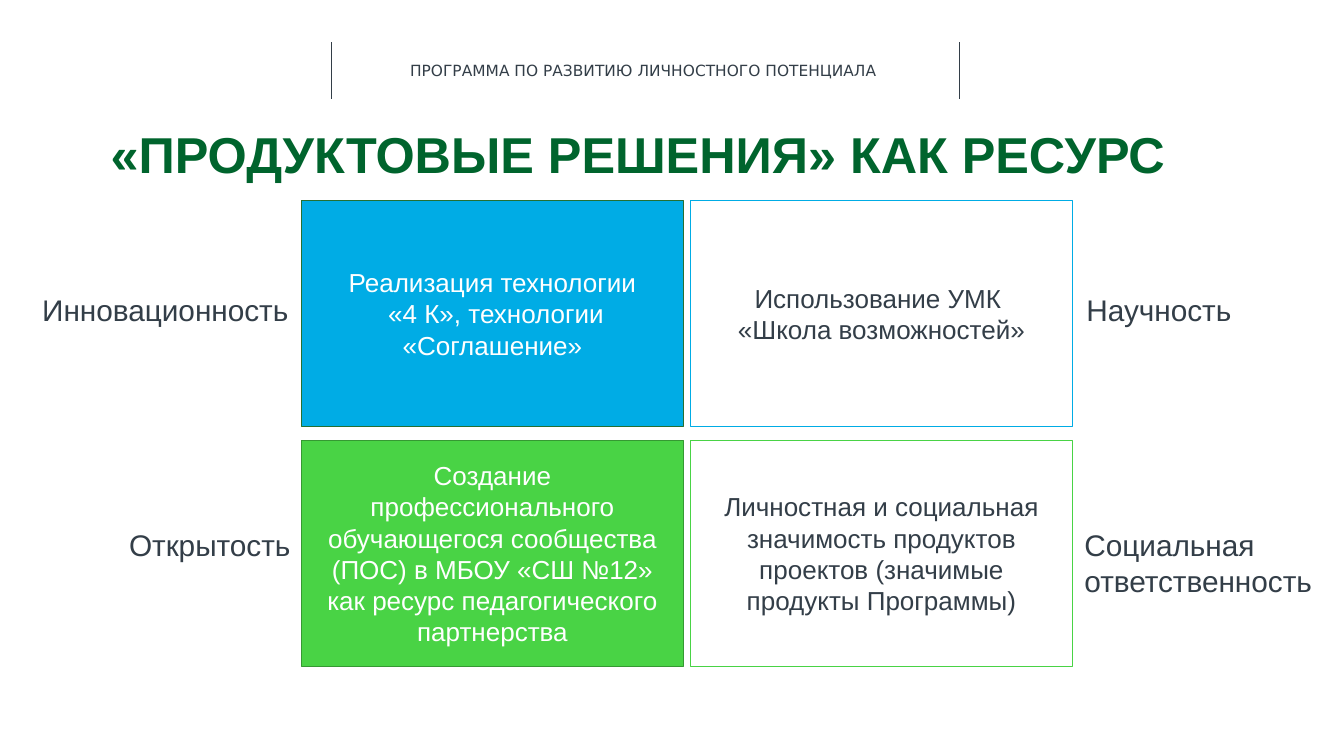
from lxml.etree import SubElement
from pptx import Presentation
from pptx.dml.color import RGBColor
from pptx.enum.shapes import MSO_CONNECTOR as Connector, MSO_SHAPE as Shape
from pptx.enum.text import MSO_ANCHOR as Anchor, PP_ALIGN as Align
from pptx.oxml.ns import qn
from pptx.util import Pt

COLOURS = {
    "ink": "333E48", "white": "FFFFFF", "title": "00642D",
    "blue": "00ACE5", "blue_edge": "256F32",
    "green": "49D345", "green_edge": "359932",
}
PROGRAMME = "ПРОГРАММА ПО РАЗВИТИЮ ЛИЧНОСТНОГО ПОТЕНЦИАЛА"
TITLE = "«ПРОДУКТОВЫЕ РЕШЕНИЯ» КАК РЕСУРС "

# Rows of cards: (paragraphs, fill, edge, text colour)
CARDS = [
    [(["Реализация технологии", " «4 К», технологии «Соглашение»"],
      "blue", "blue_edge", "white"),
     (["Использование УМК ", "«Школа возможностей»"], "white", "blue", "ink")],
    [(["Создание профессионального обучающегося сообщества (ПОС) в МБОУ "
       "«СШ №12» как ресурс педагогического партнерства"],
      "green", "green_edge", "white"),
     (["Личностная и социальная значимость продуктов проектов "
       "(значимые продукты Программы)"], "white", "green", "ink")],
]
# Labels beside the cards: (text, left, top, width, height, alignment)
LABELS = [
    ("Инновационность", -1.44, 204.48, 214.56, 33.12, Align.RIGHT),
    ("Научность", 768.96, 204.48, 150.48, 33.12, Align.LEFT),
    ("Открытость", 0, 372.96, 214.56, 33.12, Align.RIGHT),
    ("Социальная ответственность", 767.52, 372.96, 190.8, 59.04, Align.LEFT),
]
GRID_LEFT, GRID_TOP = 215.28, 143.28
CARD_WIDTH, CARD_HEIGHT = 272.88, 161.28
COLUMN_GAP, ROW_GAP = 5.04, 10.08
RULE_XS, RULE_TOP, RULE_BOTTOM = (236.88, 685.44), 30.24, 70.56


def rgb(name):
    return RGBColor.from_string(COLOURS[name])


def write(shape, paragraphs, size, colour, align, font="Arial", bold=False):
    frame = shape.text_frame
    frame.word_wrap = True
    for index, text in enumerate(paragraphs):
        para = frame.add_paragraph() if index else frame.paragraphs[0]
        para.text = text
        para.alignment = align
        para.font.name = font
        para.font.size = Pt(size)
        para.font.bold = bold
        para.font.color.rgb = rgb(colour)


def add_text(page, text, left, top, width, height, *style, **options):
    box = page.shapes.add_textbox(Pt(left), Pt(top), Pt(width), Pt(height))
    write(box, [text], *style, **options)


def add_rule(page, x):
    rule = page.shapes.add_connector(
        Connector.STRAIGHT, Pt(x), Pt(RULE_TOP), Pt(x), Pt(RULE_BOTTOM))
    rule.line.color.rgb = rgb("ink")
    rule.line.width = Pt(0.75)
    SubElement(rule._element.spPr, qn("a:effectLst"))


def add_card(page, row, column, paragraphs, fill, edge, colour):
    card = page.shapes.add_shape(
        Shape.RECTANGLE,
        Pt(GRID_LEFT + column * (CARD_WIDTH + COLUMN_GAP)),
        Pt(GRID_TOP + row * (CARD_HEIGHT + ROW_GAP)),
        Pt(CARD_WIDTH), Pt(CARD_HEIGHT))
    card.shadow.inherit = False
    card.fill.solid()
    card.fill.fore_color.rgb = rgb(fill)
    card.line.color.rgb = rgb(edge)
    card.line.width = Pt(1)
    card.text_frame.vertical_anchor = Anchor.MIDDLE
    write(card, paragraphs, 18.6, colour, Align.CENTER)


def main():
    deck = Presentation()
    deck.slide_width, deck.slide_height = Pt(960), Pt(540)
    page = deck.slides.add_slide(deck.slide_layouts[6])
    for x in RULE_XS:
        add_rule(page, x)
    add_text(page, PROGRAMME, 285.84, 40.32, 350.64, 20.88,
             11, "ink", Align.LEFT, font="DejaVu Sans")
    add_text(page, TITLE, 29.52, 84.24, 862.56, 36.72,
             36, "title", Align.CENTER, bold=True)
    for row, cards in enumerate(CARDS):
        for column, card in enumerate(cards):
            add_card(page, row, column, *card)
    for text, left, top, width, height, align in LABELS:
        add_text(page, text, left, top, width, height, 21.3, "ink", align)
    deck.save("out.pptx")


if __name__ == "__main__":
    main()
